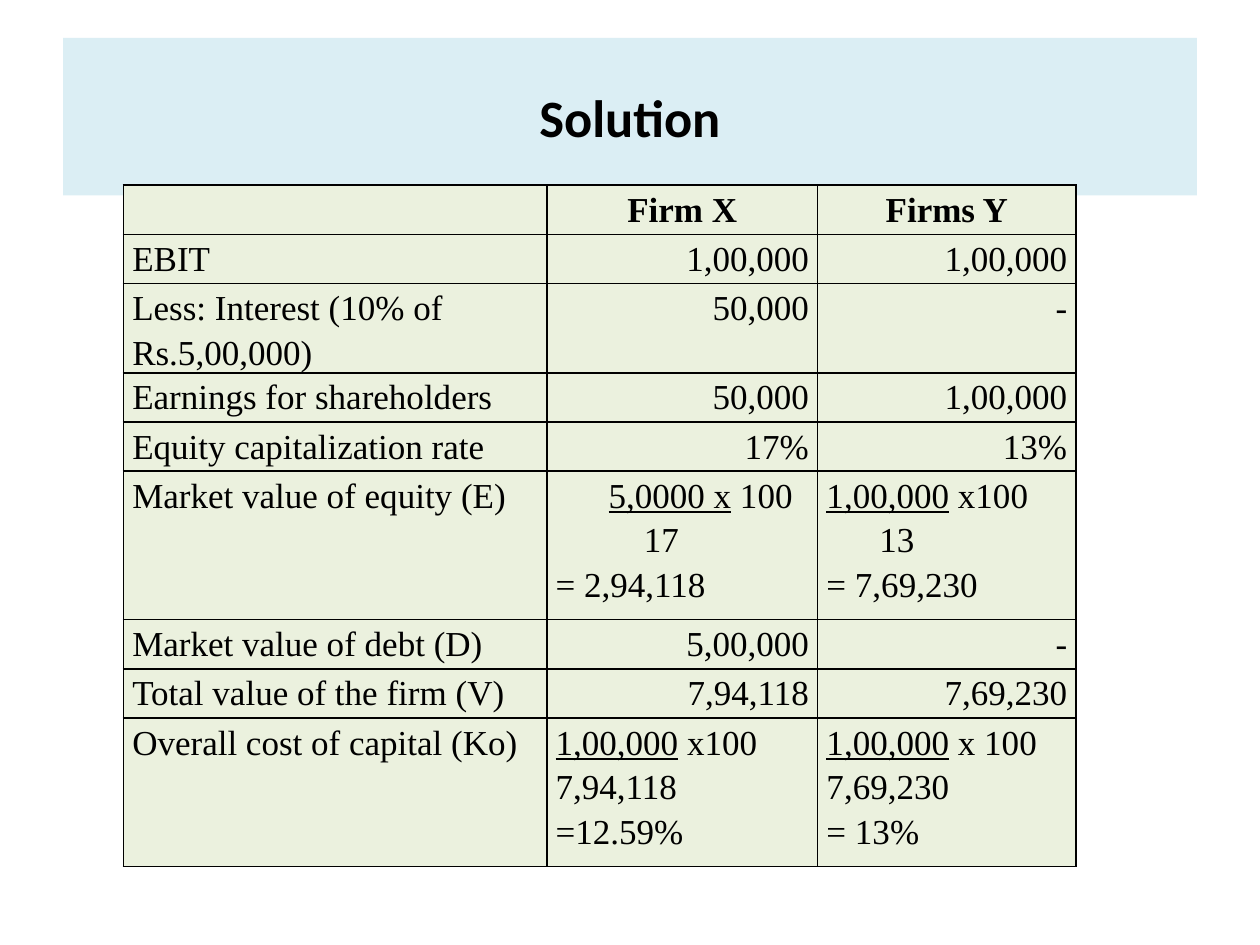
from lxml import etree
from pptx import Presentation
from pptx.dml.color import RGBColor
from pptx.enum.text import MSO_ANCHOR, PP_ALIGN
from pptx.oxml.ns import qn
from pptx.util import Inches, Pt

LEFT, CENTER, RIGHT, JUSTIFY = PP_ALIGN.LEFT, PP_ALIGN.CENTER, PP_ALIGN.RIGHT, PP_ALIGN.JUSTIFY
MIDDLE = MSO_ANCHOR.MIDDLE
TITLE_ONLY = 5


def color(hex_string):
    return RGBColor.from_string(hex_string)


def add_borders(cell):
    properties = cell._tc.get_or_add_tcPr()
    for position, side in enumerate(("lnL", "lnR", "lnT", "lnB")):
        line = etree.Element(qn(f"a:{side}"), w=str(Pt(1)))
        fill = etree.SubElement(line, qn("a:solidFill"))
        etree.SubElement(fill, qn("a:srgbClr"), val="000000")
        properties.insert(position, line)


presentation = Presentation()
presentation.slide_width = Inches(10)
presentation.slide_height = Inches(7.5)
slide = presentation.slides.add_slide(presentation.slide_layouts[TITLE_ONLY])

# Title band
title = slide.shapes.title
title.left, title.top, title.width, title.height = Inches(0.5), Inches(0.3), Inches(9), Inches(1.25)
title.fill.solid()
title.fill.fore_color.rgb = color("DBEEF4")
title.text_frame.text = "Solution"
title.text_frame.vertical_anchor = MIDDLE
paragraph = title.text_frame.paragraphs[0]
paragraph.alignment = CENTER
font = paragraph.runs[0].font
font.name, font.size, font.bold = "Calibri", Pt(30), True
font.color.rgb = color("000000")

# Table content: a calculation is a list of (indent in inches, underlined part, plain part)
rows = [
    ("", "Firm X", "Firms Y"),
    ("EBIT", "1,00,000", "1,00,000"),
    ("Less: Interest (10% of Rs.5,00,000)", "50,000", "-"),
    ("Earnings for shareholders", "50,000", "1,00,000"),
    ("Equity capitalization rate", "17%", "13%"),
    ("Market value of equity (E)",
     [(0.42, "5,0000 x", " 100"), (0.7, "", "17"), (0, "", "= 2,94,118")],
     [(0, "1,00,000", " x100"), (0.42, "", "13"), (0, "", "= 7,69,230")]),
    ("Market value of debt (D)", "5,00,000", "-"),
    ("Total value of the firm (V)", "7,94,118", "7,69,230"),
    ("Overall cost of capital (Ko)",
     [(0, "1,00,000", " x100"), (0, "", "7,94,118"), (0, "", "=12.59%")],
     [(0, "1,00,000", " x 100"), (0, "", "7,69,230"), (0, "", "= 13%")]),
]
column_widths = [3.36, 2.15, 2.05]

# Table grid
table = slide.shapes.add_table(len(rows), len(column_widths), Inches(0.98), Inches(1.47),
                               Inches(7.56), Inches(5.09)).table
for column, width in zip(table.columns, column_widths):
    column.width = Inches(width)

# Table cells
for row_index, values in enumerate(rows):
    has_calculation = isinstance(values[1], list)
    table.rows[row_index].height = Inches(1.18 if has_calculation else 0.39)
    for column_index, value in enumerate(values):
        cell = table.cell(row_index, column_index)
        cell.margin_left = cell.margin_right = Inches(0.07)
        cell.margin_top = cell.margin_bottom = 0
        cell.fill.solid()
        cell.fill.fore_color.rgb = color("EBF1DE")
        add_borders(cell)

        if column_index == 0:
            alignment = LEFT
        elif row_index == 0:
            alignment = CENTER
        else:
            alignment = JUSTIFY if has_calculation else RIGHT

        lines = value if isinstance(value, list) else [(0, "", value)]
        for line_index, (indent, underlined, plain) in enumerate(lines):
            text_frame = cell.text_frame
            paragraph = text_frame.add_paragraph() if line_index else text_frame.paragraphs[0]
            paragraph.alignment = alignment
            paragraph.line_spacing = 1.15
            if indent:
                paragraph._p.get_or_add_pPr().set("marL", str(Inches(indent)))
            for text, underline in ((underlined, True), (plain, False)):
                if not text:
                    continue
                run = paragraph.add_run()
                run.text = text
                run.font.name, run.font.size = "Times New Roman", Pt(20)
                run.font.bold = row_index == 0
                run.font.underline = underline
                run.font.color.rgb = color("000000")

presentation.save("out.pptx")
